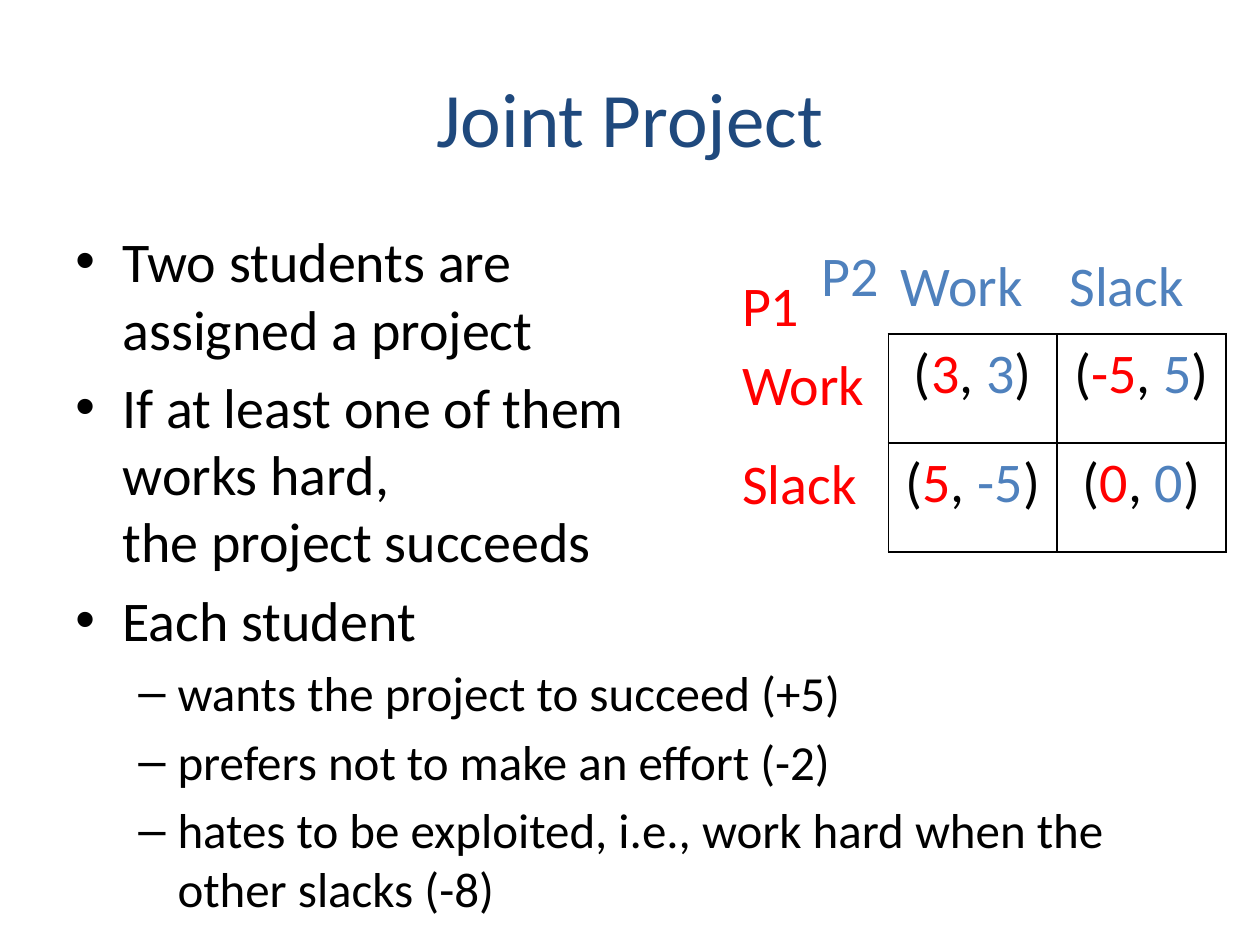
import pptx
import pptx.util
import pptx.dml.color
import pptx.enum.text
import lxml.etree
from pptx.util import Cm, Pt

COLORS = {"title": "1F497D", "text": "000000", "P1": "FF0000", "P2": "4F81BD"}
CENTER = pptx.enum.text.PP_ALIGN.CENTER
TOP = pptx.enum.text.MSO_ANCHOR.TOP
MIDDLE = pptx.enum.text.MSO_ANCHOR.MIDDLE


def style(run, size, color):
    run.font.name = "Calibri"
    run.font.size = Pt(size)
    run.font.bold = False
    run.font.color.rgb = pptx.dml.color.RGBColor.from_string(COLORS[color])


def add_xml(parent, tag, **attributes):
    return lxml.etree.SubElement(parent, pptx.oxml.ns.qn(tag), **attributes)


deck = pptx.Presentation()
deck.slide_width, deck.slide_height = Cm(25.4), Cm(19.05)
slide = deck.slides.add_slide(deck.slide_layouts[5])

title = slide.shapes.title
title.left, title.top, title.width, title.height = Cm(1.27), Cm(0.76), Cm(22.86), Cm(3.18)
title.text_frame.text = "Joint Project"
title.text_frame.vertical_anchor = MIDDLE
title.text_frame.paragraphs[0].alignment = CENTER
style(title.text_frame.paragraphs[0].runs[0], 44, "title")

# Story: level, text (\v is a line break)
story = [
    (0, "Two students are \vassigned a project"),
    (0, "If at least one of them \vworks hard, \vthe project succeeds"),
    (0, "Each student"),
    (1, "wants the project to succeed (+5)"),
    (1, "prefers not to make an effort (-2)"),
    (1, "hates to be exploited, i.e., work hard when the other slacks (-8)"),
]
# Per level: size, bullet, left margin, hanging indent
levels = [(32, "•", Cm(0.95), Cm(-0.95)), (28, "–", Cm(2.06), Cm(-0.79))]
body = slide.shapes.add_textbox(Cm(1.27), Cm(4.45), Cm(22.86), Cm(13.87)).text_frame
body.word_wrap = True
for index, (level, text) in enumerate(story):
    size, bullet, margin, indent = levels[level]
    paragraph = body.paragraphs[0] if index == 0 else body.add_paragraph()
    paragraph.text = text
    paragraph.level = level
    paragraph.space_before = Pt(size * 0.2)
    properties = paragraph._p.get_or_add_pPr()
    properties.set("marL", str(margin))
    properties.set("indent", str(indent))
    add_xml(properties, "a:buFont", typeface="Arial")
    add_xml(properties, "a:buChar", char=bullet)
    for run in paragraph.runs:
        style(run, size, "text")

# Player and strategy labels: text, player, left, top, width
labels = [
    ("P1", "P1", 14.71, 5.33, 1.68),
    ("P2", "P2", 16.31, 4.72, 1.68),
    ("Work", "P2", 17.91, 4.93, 3),
    ("Slack", "P2", 21.31, 4.93, 2.84),
    ("Work", "P1", 14.71, 6.93, 3),
    ("Slack", "P1", 14.71, 8.92, 2.84),
]
for text, player, left, top, width in labels:
    label = slide.shapes.add_textbox(Cm(left), Cm(top), Cm(width), Cm(1.62)).text_frame
    label.word_wrap = False
    label.auto_size = pptx.enum.text.MSO_AUTO_SIZE.SHAPE_TO_FIT_TEXT
    label.text = text
    style(label.paragraphs[0].runs[0], 32, player)

payoffs = [[("3", "3"), ("-5", "5")], [("5", "-5"), ("0", "0")]]
matrix = slide.shapes.add_table(2, 2, Cm(17.91), Cm(6.73), Cm(6.8), Cm(4.4)).table
matrix.first_row = matrix.horz_banding = False
for row, outcomes in enumerate(payoffs):
    for column, (first, second) in enumerate(outcomes):
        cell = matrix.cell(row, column)
        cell.vertical_anchor = TOP
        paragraph = cell.text_frame.paragraphs[0]
        paragraph.alignment = CENTER
        for text, color in [("(", "text"), (first, "P1"), (", ", "text"),
                            (second, "P2"), (")", "text")]:
            run = paragraph.add_run()
            run.text = text
            style(run, 32, color)
        cell_properties = cell._tc.get_or_add_tcPr()
        for side in ("a:lnL", "a:lnR", "a:lnT", "a:lnB"):
            border = add_xml(cell_properties, side, w=str(Pt(1)))
            add_xml(add_xml(border, "a:solidFill"), "a:srgbClr", val=COLORS["text"])
        cell.fill.background()

deck.save("out.pptx")
